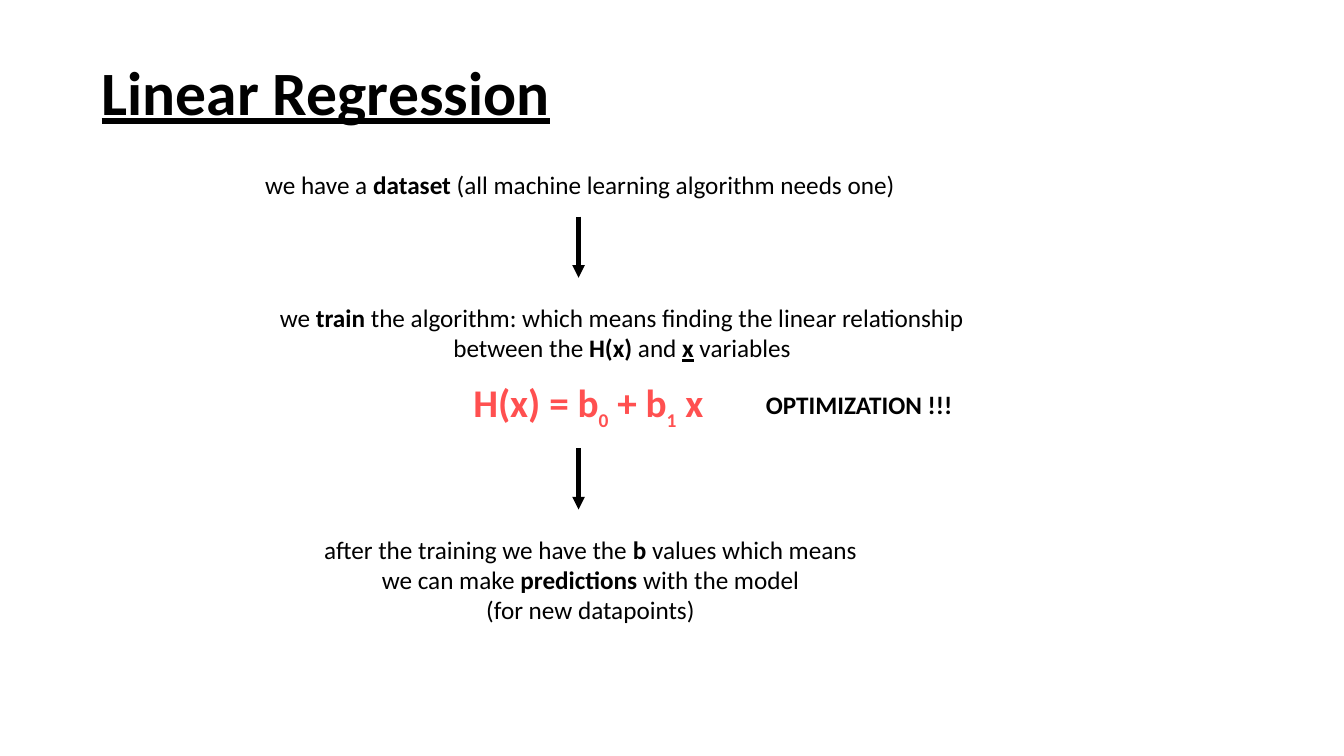
from lxml.etree import SubElement
from pptx import Presentation
from pptx.dml.color import RGBColor
from pptx.enum.shapes import MSO_CONNECTOR
from pptx.enum.text import MSO_ANCHOR, MSO_AUTO_SIZE, PP_ALIGN
from pptx.oxml.ns import qn
from pptx.util import Cm, Pt

BLACK = RGBColor(0x00, 0x00, 0x00)
CORAL = RGBColor(0xFF, 0x50, 0x50)
FONT = "Calibri"

HEADING = "Linear Regression"

# Each paragraph is a list of plain strings and (text, style) pairs.
DATASET = [["we have a ", ("dataset", "bold"),
            " (all machine learning algorithm needs one)"]]
TRAINING = [
    ["we ", ("train", "bold"),
     " the algorithm: which means finding the linear relationship"],
    ["between the ", ("H(x)", "bold"), " and ", ("x", "bold underline"), " variables"],
]
HYPOTHESIS = [["H(x) = b", ("0", "subscript"), " + b", ("1", "subscript"), " x"]]
PREDICTION = [
    ["after the training we have the ", ("b", "bold"), " values which means"],
    ["we can make ", ("predictions", "bold"), " with the model"],
    ["(for new datapoints)"],
]
REMARK = [["OPTIMIZATION !!!"]]

# Left, top, width and height in cm, then the paragraph look.
STEPS = [
    (DATASET, (6.43, 4.14, 16.59, 1.02), PP_ALIGN.LEFT, 18, BLACK, False),
    (TRAINING, (6.71, 7.49, 17.93, 1.8), PP_ALIGN.CENTER, 18, BLACK, False),
    (HYPOTHESIS, (11.68, 9.4, 6.32, 1.45), PP_ALIGN.LEFT, 28, CORAL, True),
    (REMARK, (19.05, 9.68, 5.26, 1.02), PP_ALIGN.LEFT, 18, BLACK, True),
    (PREDICTION, (7.82, 13.34, 14.12, 2.57), PP_ALIGN.CENTER, 18, BLACK, False),
]
ARROW_X, ARROW_LENGTH = 14.58, 1.54
ARROW_TOPS = (5.46, 11.3)


def set_font(font, size, color, bold):
    font.name = FONT
    font.size = Pt(size)
    font.color.rgb = color
    font.bold = bold


def add_piece(paragraph, piece):
    text, style = (piece, "") if isinstance(piece, str) else piece
    run = paragraph.add_run()
    run.text = text
    if "bold" in style:
        run.font.bold = True
    if "underline" in style:
        run.font.underline = True
    if style == "subscript":
        run.font.size = Pt(24)
        run.font._element.set("baseline", "-30000")


def add_step(slide, paragraphs, place, align, size, color, bold):
    frame = slide.shapes.add_textbox(*map(Cm, place)).text_frame
    frame.word_wrap = False
    frame.auto_size = MSO_AUTO_SIZE.SHAPE_TO_FIT_TEXT
    for index, pieces in enumerate(paragraphs):
        paragraph = frame.add_paragraph() if index else frame.paragraphs[0]
        paragraph.alignment = align
        set_font(paragraph.font, size, color, bold)
        for piece in pieces:
            add_piece(paragraph, piece)


def add_down_arrow(slide, top):
    arrow = slide.shapes.add_connector(
        MSO_CONNECTOR.STRAIGHT,
        Cm(ARROW_X), Cm(top), Cm(ARROW_X), Cm(top + ARROW_LENGTH))
    arrow.line.color.rgb = BLACK
    arrow.line.width = Pt(3)
    SubElement(arrow.line._get_or_add_ln(), qn("a:tailEnd"), type="triangle")
    SubElement(arrow._element.spPr, qn("a:effectLst"))


def add_heading(slide):
    title = slide.shapes.title
    title.left, title.top, title.width, title.height = map(Cm, (2.31, 0.56, 29.21, 3.68))
    frame = title.text_frame
    frame.text = HEADING
    frame.vertical_anchor = MSO_ANCHOR.MIDDLE
    frame.auto_size = MSO_AUTO_SIZE.NONE
    paragraph = frame.paragraphs[0]
    paragraph.alignment = PP_ALIGN.LEFT
    paragraph.line_spacing = 0.9
    set_font(paragraph.font, 44, BLACK, True)
    paragraph.font.underline = True


def main():
    deck = Presentation()
    deck.slide_width, deck.slide_height = Cm(33.87), Cm(19.05)
    slide = deck.slides.add_slide(deck.slide_layouts.get_by_name("Title Only"))
    add_heading(slide)
    for step in STEPS:
        add_step(slide, *step)
    for top in ARROW_TOPS:
        add_down_arrow(slide, top)
    deck.save("out.pptx")


if __name__ == "__main__":
    main()
